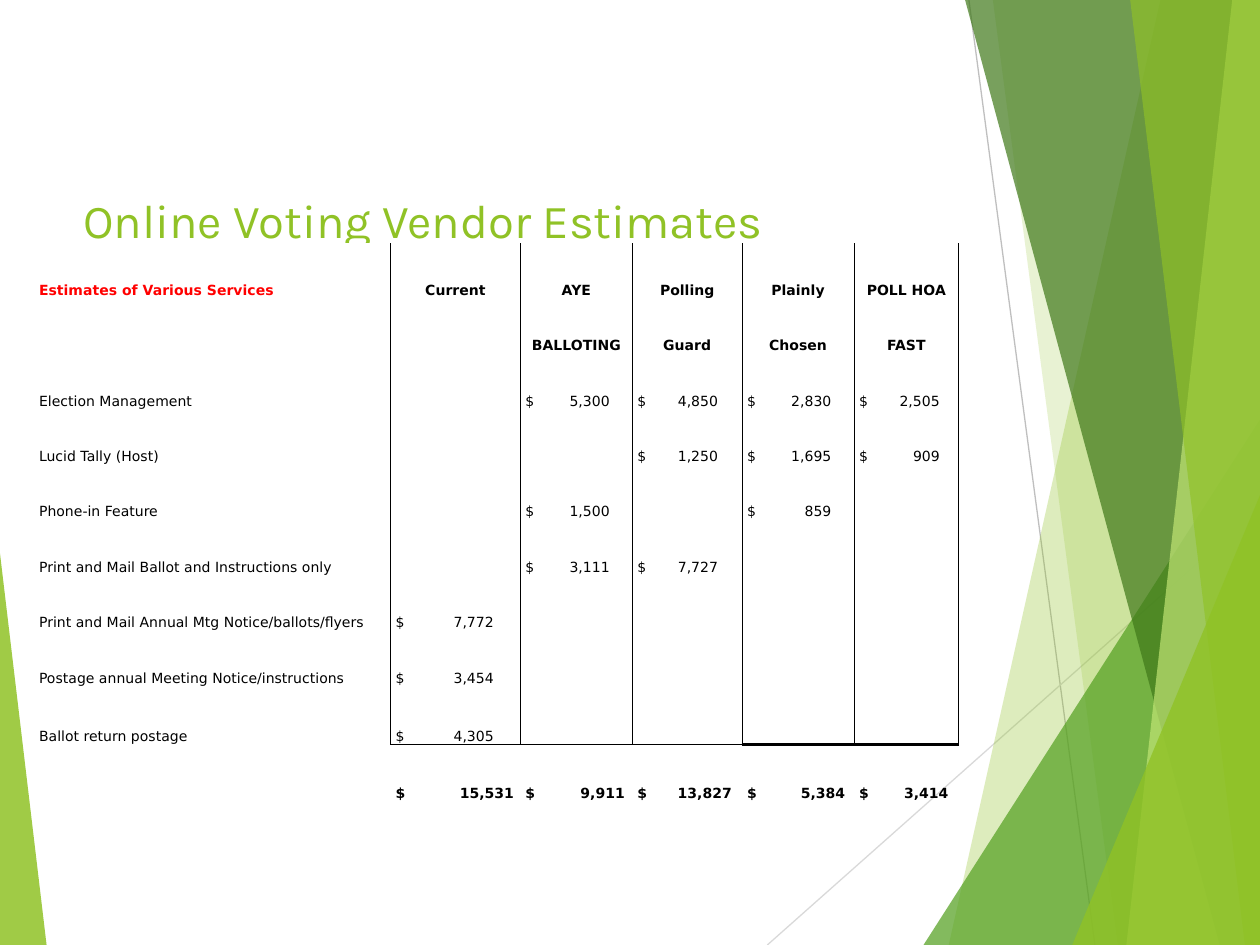
from dataclasses import dataclass

from lxml.etree import SubElement
from pptx import Presentation
from pptx.dml.color import RGBColor
from pptx.enum.shapes import MSO_CONNECTOR, MSO_SHAPE
from pptx.enum.text import MSO_ANCHOR, PP_ALIGN
from pptx.oxml.ns import qn
from pptx.util import Inches, Pt


@dataclass(frozen=True)
class Theme:
    lime: str = "90C226"
    green: str = "54A021"
    forest: str = "3F7819"
    pale: str = "C0E474"
    white: str = "FFFFFF"
    black: str = "000000"
    red: str = "FF0000"
    title_font: str = "Karla"
    table_font: str = "DejaVu Sans"
    title_size: float = 27
    table_size: float = 8


@dataclass(frozen=True)
class Ray:
    start: tuple[float, float]
    end: tuple[float, float]
    color: str


@dataclass(frozen=True)
class Panel:
    """A full-height facet that reaches the right edge of the slide."""
    top_x: float
    bottom_x: float
    color: str
    opacity: int


@dataclass(frozen=True)
class Wedge:
    left: float
    top: float
    width: float
    apex: float
    color: str
    opacity: int


@dataclass(frozen=True)
class Vendor:
    name: tuple[str, str]
    width: float
    amount_edge: float
    total_edge: float
    amounts: tuple[str, ...]
    total: str
    rule: float


THEME = Theme()
SLIDE_W, SLIDE_H = 10, 7.5

RAYS = [
    Ray((7.69, 0), (8.69, 7.5), "BFBFBF"),
    Ray((10, 4.03), (6.09, 7.5), "D9D9D9"),
]
FACETS = [
    Panel(9.21, 7.53, THEME.lime, 30),
    Panel(7.88, 8.87, THEME.lime, 20),
    Wedge(7.33, 3.33, 2.67, 1, THEME.green, 72),
    Panel(7.66, 9.68, THEME.forest, 70),
    Panel(9.78, 8.94, THEME.pale, 70),
    Panel(8.97, 9.88, THEME.lime, 65),
    Wedge(8.51, 3.93, 1.49, 1, THEME.lime, 80),
    Wedge(0, 4.39, 0.37, 0, THEME.lime, 85),
]

LABEL_WIDTH = 2.8
HEADING = "Estimates of Various Services"
SERVICES = [
    "Election Management",
    "Lucid Tally (Host)",
    "Phone-in Feature",
    "Print and Mail Ballot and Instructions only",
    "Print and Mail Annual Mtg Notice/ballots/flyers",
    "Postage annual Meeting Notice/instructions",
    "Ballot return postage",
]
VENDORS = [
    Vendor(("Current", ""), 1.03, 0.82, 0.98,
           ("", "", "", "", "7,772", "3,454", "4,305"), "15,531", 1),
    Vendor(("AYE", "BALLOTING"), 0.89, 0.71, 0.83,
           ("5,300", "", "1,500", "3,111", "", "", ""), "9,911", 1),
    Vendor(("Polling", "Guard"), 0.87, 0.68, 0.79,
           ("4,850", "1,250", "", "7,727", "", "", ""), "13,827", 1),
    Vendor(("Plainly", "Chosen"), 0.89, 0.71, 0.82,
           ("2,830", "1,695", "859", "", "", "", ""), "5,384", 1.5),
    Vendor(("POLL HOA", "FAST"), 0.83, 0.68, 0.75,
           ("2,505", "909", "", "", "", "", ""), "3,414", 1.5),
]
FIRST_SERVICE = 2
TOTAL_ROW = FIRST_SERVICE + len(SERVICES)
ROW_HEIGHTS = [0.44] * 8 + [0.46] * 2
CELL_INSET, AMOUNT_INSET = 0.01, 0.04


def rgb(color: str) -> RGBColor:
    return RGBColor.from_string(color)


def draw_ray(shapes, ray: Ray) -> None:
    line = shapes.add_connector(MSO_CONNECTOR.STRAIGHT, *map(Inches, ray.start + ray.end))
    line.line.color.rgb = rgb(ray.color)
    line.line.width = Pt(0.75)
    SubElement(line._element.spPr, qn("a:effectLst"))


def draw_facet(shapes, facet: Panel | Wedge) -> None:
    if isinstance(facet, Panel):
        outline = shapes.build_freeform(Inches(facet.top_x), 0)
        corners = [(SLIDE_W, 0), (SLIDE_W, SLIDE_H), (facet.bottom_x, SLIDE_H)]
        outline.add_line_segments([(Inches(x), Inches(y)) for x, y in corners])
        shape = outline.convert_to_shape()
    else:
        shape = shapes.add_shape(
            MSO_SHAPE.ISOSCELES_TRIANGLE, Inches(facet.left), Inches(facet.top),
            Inches(facet.width), Inches(SLIDE_H - facet.top))
        shape.adjustments[0] = facet.apex
    shape.shadow.inherit = False
    shape.line.fill.background()
    shape.fill.solid()
    shape.fill.fore_color.rgb = rgb(facet.color)
    color = shape._element.spPr.find(qn("a:solidFill"))[0]
    SubElement(color, qn("a:alpha"), val=str(facet.opacity * 1000))


def set_borders(cell, **widths: float) -> None:
    """Draw the sides given as L, R, T or B; the other sides stay bare."""
    properties = cell._tc.get_or_add_tcPr()
    for position, side in enumerate("LRTB"):
        width = widths.get(side, 0)
        border = properties.makeelement(qn(f"a:ln{side}"), {"w": str(Pt(width))})
        if width:
            fill = SubElement(border, qn("a:solidFill"))
            SubElement(fill, qn("a:srgbClr"), val=THEME.black)
        else:
            SubElement(border, qn("a:noFill"))
        properties.insert(position, border)


def write_cell(cell, text: str, bold: bool = False, color: str = THEME.black,
               align: PP_ALIGN = PP_ALIGN.LEFT) -> None:
    paragraph = cell.text_frame.paragraphs[0]
    paragraph.alignment = align
    paragraph.font.size = Pt(THEME.table_size)
    if text:
        run = paragraph.add_run()
        run.text = text
        run.font.name = THEME.table_font
        run.font.size = Pt(THEME.table_size)
        run.font.bold = bold
        run.font.color.rgb = rgb(color)


def write_amount(cell, amount: str, edge: float, bold: bool = False) -> None:
    """Put the dollar sign at the left and end the figure at a right tab."""
    if amount:
        cell.margin_left = Inches(AMOUNT_INSET)
        tabs = SubElement(cell.text_frame.paragraphs[0]._p.get_or_add_pPr(), qn("a:tabLst"))
        SubElement(tabs, qn("a:tab"), pos=str(Inches(edge - AMOUNT_INSET)), algn="r")
    write_cell(cell, f"$\t{amount}" if amount else "", bold)


def format_cell(cell, row: int, column: int) -> None:
    cell.vertical_anchor = MSO_ANCHOR.BOTTOM
    cell.margin_left = cell.margin_right = cell.margin_top = Inches(CELL_INSET)
    cell.margin_bottom = 0
    if row == 0 and column < 2:
        cell.fill.solid()
        cell.fill.fore_color.rgb = rgb(THEME.white)
    else:
        cell.fill.background()
    rule = VENDORS[column - 1].rule if column else 0
    if row == TOTAL_ROW:
        set_borders(cell, T=rule)
    else:
        set_borders(cell, L=0.5 if column else 0, R=0.5,
                    B=rule if row == TOTAL_ROW - 1 else 0)


def draw_estimates(shapes) -> None:
    widths = [LABEL_WIDTH] + [vendor.width for vendor in VENDORS]
    table = shapes.add_table(
        len(ROW_HEIGHTS), len(widths), Inches(0.3), Inches(1.93),
        Inches(sum(widths)), Inches(sum(ROW_HEIGHTS))).table
    table.first_row = table.horz_banding = False
    for column, width in zip(table.columns, widths):
        column.width = Inches(width)
    for row, height in zip(table.rows, ROW_HEIGHTS):
        row.height = Inches(height)
    for row in range(len(ROW_HEIGHTS)):
        for column in range(len(widths)):
            format_cell(table.cell(row, column), row, column)

    write_cell(table.cell(0, 0), HEADING, True, THEME.red)
    for row, service in enumerate(SERVICES, FIRST_SERVICE):
        write_cell(table.cell(row, 0), service)
    for column, vendor in enumerate(VENDORS, 1):
        for row, word in enumerate(vendor.name):
            write_cell(table.cell(row, column), word, True, align=PP_ALIGN.CENTER)
        for row, amount in enumerate(vendor.amounts, FIRST_SERVICE):
            write_amount(table.cell(row, column), amount, vendor.amount_edge)
        write_amount(table.cell(TOTAL_ROW, column), vendor.total, vendor.total_edge, True)


def write_title(title) -> None:
    title.left, title.top, title.width, title.height = map(Inches, (0.56, 1.44, 7.05, 0.6))
    title.text_frame.vertical_anchor = MSO_ANCHOR.MIDDLE
    paragraph = title.text_frame.paragraphs[0]
    paragraph.alignment = PP_ALIGN.LEFT
    run = paragraph.add_run()
    run.text = "Online Voting Vendor Estimates"
    run.font.name = THEME.title_font
    run.font.size = Pt(THEME.title_size)
    run.font.color.rgb = rgb(THEME.lime)


def main() -> None:
    deck = Presentation()
    deck.slide_width, deck.slide_height = Inches(SLIDE_W), Inches(SLIDE_H)
    slide = deck.slides.add_slide(deck.slide_layouts[5])
    for ray in RAYS:
        draw_ray(slide.shapes, ray)
    for facet in FACETS:
        draw_facet(slide.shapes, facet)
    write_title(slide.shapes.title)
    draw_estimates(slide.shapes)
    deck.save("out.pptx")


if __name__ == "__main__":
    main()
